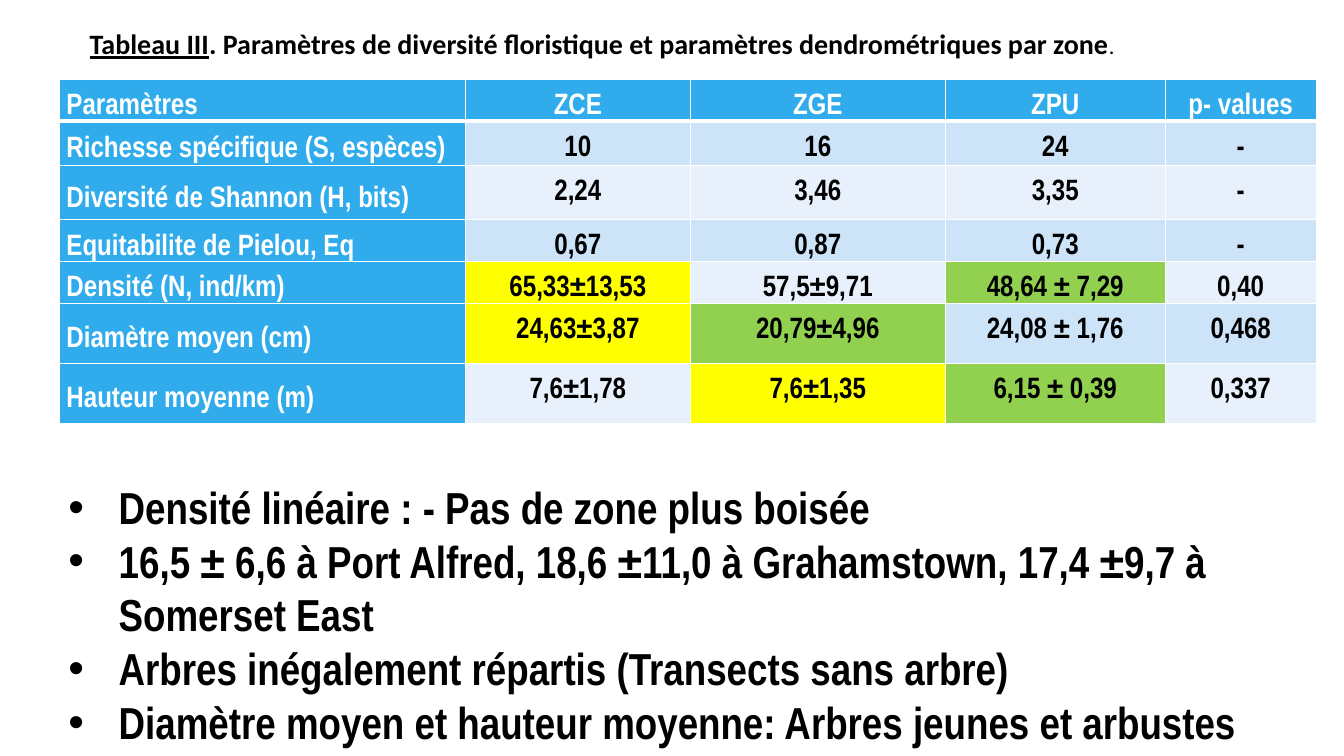
from lxml import etree
from pptx import Presentation
from pptx.dml.color import RGBColor
from pptx.enum import text as txt
from pptx.oxml import ns
from pptx.util import Pt

BLACK = RGBColor(0x00, 0x00, 0x00)
WHITE = RGBColor(0xFF, 0xFF, 0xFF)
BLUE = RGBColor(0x30, 0xAC, 0xEC)
BANDS = (RGBColor(0xE8, 0xF1, 0xFB), RGBColor(0xCD, 0xE3, 0xF8))
YELLOW = RGBColor(0xFF, 0xFF, 0x00)
GREEN = RGBColor(0x92, 0xD0, 0x50)
NARROW = "Arial Narrow"

CAPTION = [
    ("Tableau III", dict(size=20, underline=True)),
    (". Paramètres de diversité floristique et paramètres dendrométriques par zone", dict(size=20)),
    (".", dict(size=16, bold=False)),
]
PARAMETERS = [
    ("Paramètres", "ZCE", "ZGE", "ZPU", "p- values"),
    ("Richesse spécifique (S, espèces)", "10", "16", "24", "-"),
    ("Diversité de Shannon (H, bits)", "2,24", "3,46", "3,35", "-"),
    ("Equitabilite de Pielou, Eq", "0,67", "0,87", "0,73", "-"),
    ("Densité (N, ind/km)", "65,33±13,53", "57,5±9,71", "48,64 ± 7,29", "0,40"),
    ("Diamètre moyen (cm)", "24,63±3,87", "20,79±4,96", "24,08 ± 1,76", "0,468"),
    ("Hauteur moyenne (m)", "7,6±1,78", "7,6±1,35", "6,15 ± 0,39", "0,337"),
]
# (row, column) of the values that stand out
HIGHLIGHTS = {
    (4, 1): YELLOW, (5, 1): YELLOW, (6, 2): YELLOW,
    (4, 3): GREEN, (5, 2): GREEN, (6, 3): GREEN,
}
FINDINGS = [
    "Densité linéaire : - Pas de zone plus boisée",
    "16,5 ± 6,6 à Port Alfred, 18,6 ±11,0 à Grahamstown, 17,4 ±9,7 à Somerset East",
    "Arbres inégalement répartis (Transects sans arbre)",
    "Diamètre moyen et hauteur moyenne: Arbres jeunes et arbustes",
]
COLUMN_WIDTHS = (290, 160.6, 182.2, 157, 108)
ROW_HEIGHTS = (24, 31.5, 39, 29, 30, 43, 43)
BULLET_INDENT = 36


def add_text(paragraph, words, size, font=NARROW, color=BLACK, bold=True, underline=False):
    run = paragraph.add_run()
    run.text = words
    run.font.size = Pt(size)
    run.font.name = font
    run.font.color.rgb = color
    run.font.bold = bold
    run.font.underline = underline


def add_box(slide, left, top, width, height, wrap):
    frame = slide.shapes.add_textbox(Pt(left), Pt(top), Pt(width), Pt(height)).text_frame
    frame.word_wrap = wrap
    frame.auto_size = txt.MSO_AUTO_SIZE.SHAPE_TO_FIT_TEXT
    return frame


def add_bullet(paragraph):
    properties = paragraph._p.get_or_add_pPr()
    properties.set("marL", str(Pt(BULLET_INDENT)))
    properties.set("indent", str(-Pt(BULLET_INDENT)))
    etree.SubElement(properties, ns.qn("a:buFont"), typeface="Arial")
    etree.SubElement(properties, ns.qn("a:buChar"), char="•")


def set_borders(cell, bottom):
    """Draw white borders, 1 pt except for the bottom one."""
    properties = cell._tc.get_or_add_tcPr()
    for position, (side, width) in enumerate(
            (("lnL", 1), ("lnR", 1), ("lnT", 1), ("lnB", bottom))):
        line = etree.Element(ns.qn("a:" + side), w=str(Pt(width)))
        fill = etree.SubElement(line, ns.qn("a:solidFill"))
        etree.SubElement(fill, ns.qn("a:srgbClr"), val=str(WHITE))
        properties.insert(position, line)


def fill_cell(cell, words, row, column):
    header = row == 0 or column == 0
    cell.margin_left = cell.margin_right = Pt(5)
    cell.margin_top = cell.margin_bottom = Pt(0)
    cell.vertical_anchor = txt.MSO_ANCHOR.TOP if column else txt.MSO_ANCHOR.MIDDLE
    cell.fill.solid()
    cell.fill.fore_color.rgb = BLUE if header else HIGHLIGHTS.get((row, column), BANDS[row % 2])
    set_borders(cell, bottom=1 if row else 3)
    paragraph = cell.text_frame.paragraphs[0]
    paragraph.alignment = txt.PP_ALIGN.CENTER if column else txt.PP_ALIGN.JUSTIFY
    paragraph.line_spacing = 1.5
    paragraph.space_after = Pt(6)
    add_text(paragraph, words, size=21, color=WHITE if header else BLACK)


def add_parameters(slide):
    frame = slide.shapes.add_table(len(PARAMETERS), len(COLUMN_WIDTHS),
                                   Pt(42.5), Pt(57), Pt(sum(COLUMN_WIDTHS)), Pt(sum(ROW_HEIGHTS)))
    table = frame.table
    table.first_col = True
    for column, width in zip(table.columns, COLUMN_WIDTHS):
        column.width = Pt(width)
    for row, height in zip(table.rows, ROW_HEIGHTS):
        row.height = Pt(height)
    for r, values in enumerate(PARAMETERS):
        for c, words in enumerate(values):
            fill_cell(table.cell(r, c), words, r, c)


def main():
    deck = Presentation()
    deck.slide_width, deck.slide_height = Pt(960), Pt(540)
    slide = deck.slides.add_slide(deck.slide_layouts[6])

    add_parameters(slide)

    caption = add_box(slide, 57, 15.3, 753, 31.5, wrap=False)
    caption.vertical_anchor = txt.MSO_ANCHOR.MIDDLE
    for words, style in CAPTION:
        add_text(caption.paragraphs[0], words, font="Calibri", **style)

    findings = add_box(slide, 41.7, 339, 896, 201, wrap=True)
    for i, words in enumerate(FINDINGS):
        paragraph = findings.add_paragraph() if i else findings.paragraphs[0]
        add_bullet(paragraph)
        add_text(paragraph, words, size=32)

    deck.save("out.pptx")


if __name__ == "__main__":
    main()
